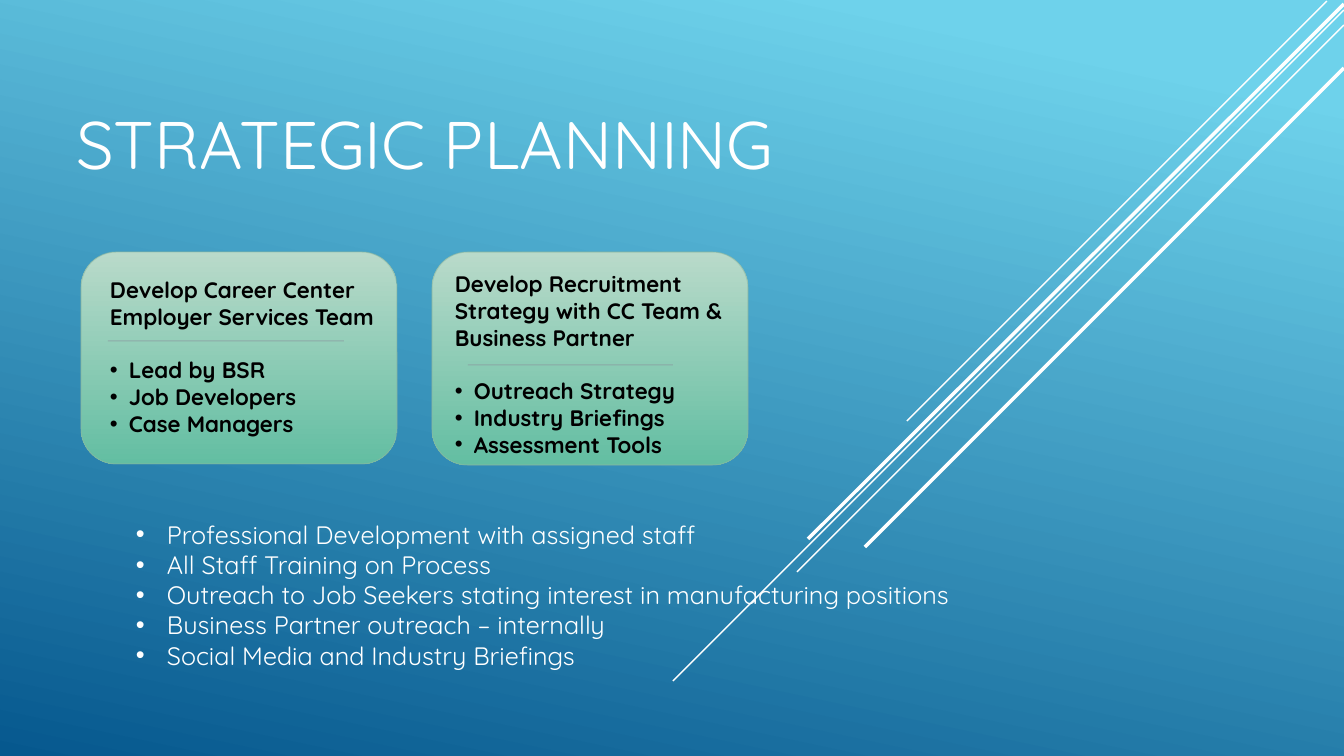
import lxml.etree
import pptx
import pptx.dml.color
import pptx.enum.shapes
import pptx.enum.text
import pptx.oxml.ns
import pptx.util

PX = 9144000 / 1008
FONT = "Quicksand"
WHITE, BLACK = "FFFFFF", "000000"
SKY, NAVY = "6ED2EB", "06588E"
MINT, GREEN = "B9DACA", "63BEA2"
CARD_EDGE, DIVIDER = "8AB7A1", "89919C"

STREAKS = [
    (1327, 1, 907, 421, 1),
    (1344, 10, 673, 681, 1),
    (1344, 25, 797, 572, 1),
    (1344, 4, 808, 539, 2.5),
    (1344, 68, 865, 547, 2.5),
]
CARDS = [
    {
        "box": (81, 252, 316, 212),
        "text_box": (100, 271, 286, 173),
        "divider": (108, 341, 344, 341),
        "heading": "Develop Career Center Employer Services Team",
        "points": ["Lead by BSR", "Job Developers", "Case Managers"],
    },
    {
        "box": (432, 252, 316, 213),
        "text_box": (445, 265, 292, 201),
        "divider": (468, 365, 673, 365),
        "heading": "Develop Recruitment Strategy with CC Team & Business Partner",
        "points": ["Outreach Strategy", "Industry Briefings", "Assessment Tools"],
    },
]
ACTIONS = [
    "Professional Development with assigned staff",
    "All Staff Training on Process",
    "Outreach to Job Seekers stating interest in manufacturing positions",
    "Business Partner outreach – internally",
    "Social Media and Industry Briefings",
]


def px(length):
    return pptx.util.Emu(round(length * PX))


def colour(code):
    return pptx.dml.color.RGBColor.from_string(code)


def add_xml(parent, tag, **attributes):
    return lxml.etree.SubElement(parent, pptx.oxml.ns.qn(tag), **attributes)


class Deck:
    """Holds the slide and draws its elements in one style."""

    def __init__(self):
        self.presentation = pptx.Presentation()
        self.presentation.slide_width = px(1344)
        self.presentation.slide_height = px(756)
        self.slide = self.presentation.slides.add_slide(
            self.presentation.slide_layouts[5])

    def gradient(self, fill, stops, clockwise):
        fill.gradient()
        fill.gradient_angle = 360 - clockwise
        for stop, (position, code) in zip(fill.gradient_stops, stops):
            stop.position = position
            stop.color.rgb = colour(code)

    def stroke(self, line, code, width, opacity=100):
        line.color.rgb = colour(code)
        line.width = pptx.util.Pt(width)
        if opacity < 100:
            tint = line.fill._xPr.find(".//" + pptx.oxml.ns.qn("a:srgbClr"))
            add_xml(tint, "a:alpha", val=str(opacity * 1000))

    def line(self, ends, code, width, opacity=100):
        connector = self.slide.shapes.add_connector(
            pptx.enum.shapes.MSO_CONNECTOR.STRAIGHT, *map(px, ends))
        self.stroke(connector.line, code, width, opacity)
        add_xml(connector._element.spPr, "a:effectLst")

    def card(self, box):
        panel = self.slide.shapes.add_shape(
            pptx.enum.shapes.MSO_SHAPE.FLOWCHART_ALTERNATE_PROCESS, *map(px, box))
        panel.shadow.inherit = False
        self.gradient(panel.fill, [(0, MINT), (1, GREEN)], 90)
        self.stroke(panel.line, CARD_EDGE, 0.75, 60)

    def run(self, paragraph, words, size, code, bold=False):
        run = paragraph.add_run()
        run.text = words
        run.font.name = FONT
        run.font.size = pptx.util.Pt(size)
        run.font.bold = bold
        run.font.color.rgb = colour(code)

    def title(self, words, box):
        heading = self.slide.shapes.title
        heading.left, heading.top, heading.width, heading.height = map(px, box)
        frame = heading.text_frame
        frame.vertical_anchor = pptx.enum.text.MSO_ANCHOR.BOTTOM
        frame.auto_size = pptx.enum.text.MSO_AUTO_SIZE.NONE
        frame.paragraphs[0].alignment = pptx.enum.text.PP_ALIGN.LEFT
        self.run(frame.paragraphs[0], words, 48, WHITE)

    def bullets(self, box, points, indent, size, code, bold=False, heading=None):
        frame = self.slide.shapes.add_textbox(*map(px, box)).text_frame
        frame.word_wrap = True
        frame.auto_size = pptx.enum.text.MSO_AUTO_SIZE.SHAPE_TO_FIT_TEXT
        paragraph = frame.paragraphs[0]
        if heading:
            self.run(paragraph, heading, size, code, bold)
        for index, point in enumerate(points):
            if index or heading:
                paragraph = frame.add_paragraph()
            properties = paragraph._p.get_or_add_pPr()
            properties.set("marL", str(px(indent)))
            properties.set("indent", str(-px(indent)))
            add_xml(properties, "a:buFont", typeface="Arial")
            add_xml(properties, "a:buChar", char="•")
            if heading and index == 0:
                paragraph.space_before = pptx.util.Pt(19)
            self.run(paragraph, point, size, code, bold)


def main():
    deck = Deck()
    deck.gradient(deck.slide.background.fill, [(0.1, SKY), (1, NAVY)], 102)
    for *ends, width in STREAKS:
        deck.line(ends, WHITE, width)
    deck.title("STRATEGIC PLANNING", (66, 67, 882, 121))
    for card in CARDS:
        deck.card(card["box"])
        deck.bullets(card["text_box"], card["points"], 19, 16, BLACK,
                     bold=True, heading=card["heading"])
        deck.line(card["divider"], DIVIDER, 0.75, 60)
    deck.bullets((126, 514, 882, 163), ACTIONS, 31, 18, WHITE)
    deck.presentation.save("out.pptx")


if __name__ == "__main__":
    main()
